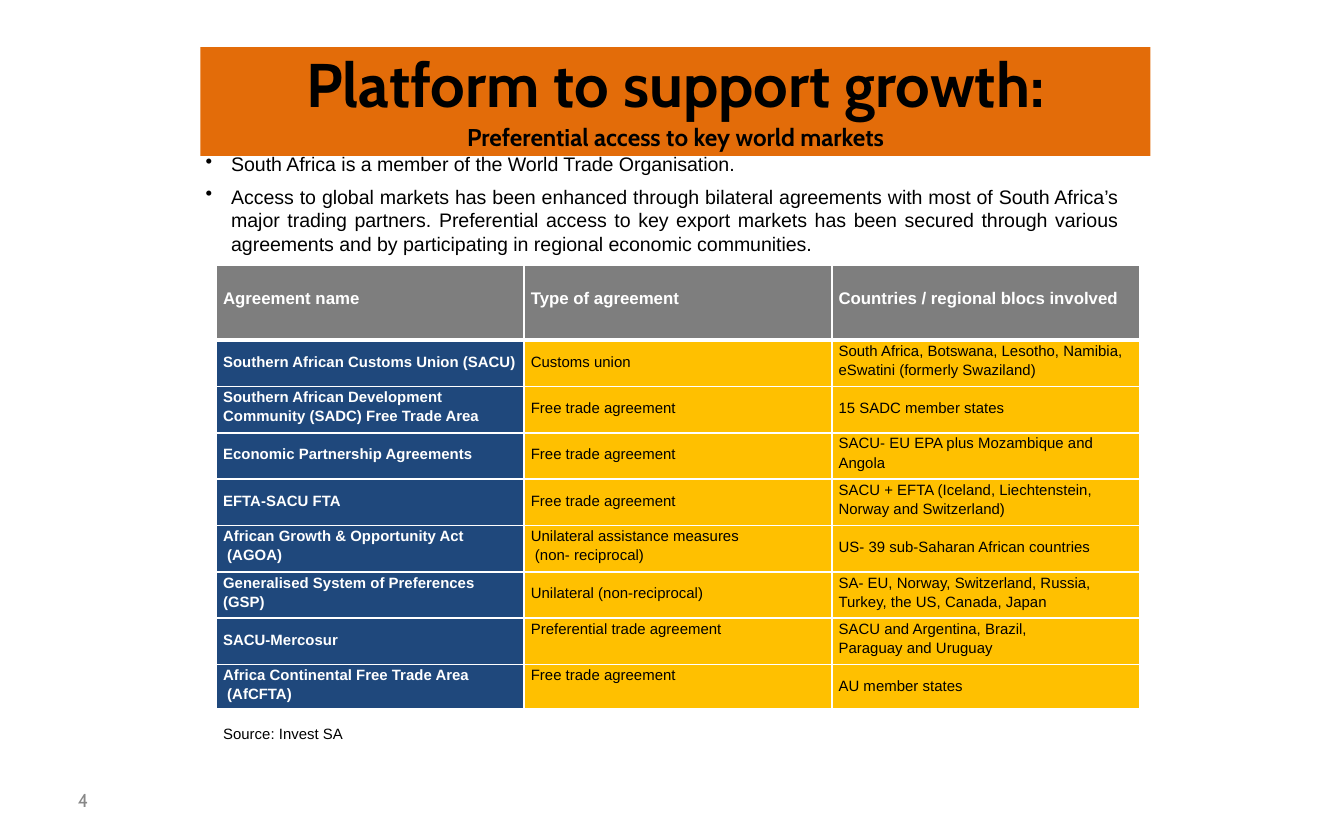
from lxml.etree import SubElement
from pptx import Presentation
from pptx.dml.color import RGBColor
from pptx.enum.text import MSO_ANCHOR, MSO_AUTO_SIZE, PP_ALIGN
from pptx.oxml.ns import qn
from pptx.util import Inches, Pt

ORANGE, GREY, NAVY, AMBER = "E36C09", "7E7E7E", "1F487C", "FFC000"
WHITE, BLACK, NUMBER_GREY = "FFFFFF", "000000", "888888"

HEADING = "Platform to support growth:"
SUBHEADING = "Preferential access to key world markets"
POINTS = [
    "South Africa is a member of the World Trade Organisation.",
    "Access to global markets has been enhanced through bilateral agreements "
    "with most of South Africa’s major trading partners. Preferential access to "
    "key export markets has been secured through various agreements and by "
    "participating in regional economic communities.",
]
HEADERS = ["Agreement name", "Type of agreement",
           "Countries / regional blocs involved"]
TOP, LOW, MIDDLE = 0, 0.02, 0.1
AGREEMENTS = [
    [("Southern African Customs Union (SACU)", MIDDLE),
     ("Customs union", MIDDLE),
     ("South Africa, Botswana, Lesotho, Namibia,\veSwatini (formerly Swaziland)", TOP)],
    [("Southern African Development\vCommunity (SADC) Free Trade Area", TOP),
     ("Free trade agreement", MIDDLE),
     ("15 SADC member states", MIDDLE)],
    [("Economic Partnership Agreements", MIDDLE),
     ("Free trade agreement", MIDDLE),
     ("SACU- EU EPA plus Mozambique and\vAngola", TOP)],
    [("EFTA-SACU FTA", MIDDLE),
     ("Free trade agreement", MIDDLE),
     ("SACU + EFTA (Iceland, Liechtenstein,\vNorway and Switzerland)", TOP)],
    [("African Growth & Opportunity Act\v (AGOA)", TOP),
     ("Unilateral assistance measures\v (non- reciprocal)", TOP),
     ("US- 39 sub-Saharan African countries", MIDDLE)],
    [("Generalised System of Preferences\n(GSP)", LOW),
     ("Unilateral (non-reciprocal)", MIDDLE),
     ("SA- EU, Norway, Switzerland, Russia,\nTurkey, the US, Canada, Japan", LOW)],
    [("SACU-Mercosur", MIDDLE),
     ("Preferential trade agreement", LOW),
     ("SACU and Argentina, Brazil,\nParaguay and Uruguay", LOW)],
    [("Africa Continental Free Trade Area\v (AfCFTA)", TOP),
     ("Free trade agreement", LOW),
     ("AU member states", MIDDLE)],
]
SOURCE = "Source: Invest SA"
PAGE = "4"

TABLE_LEFT, TABLE_TOP, COLUMN_WIDTH = 1.61, 1.97, 2.29
HEADER_HEIGHT, ROW_HEIGHT = 0.56, 0.345


def color(hex_value):
    return RGBColor.from_string(hex_value)


def style(paragraph, size, hex_value=BLACK, bold=False, name="Arial"):
    font = paragraph.font
    font.size, font.bold, font.name = Pt(size), bold, name
    font.color.rgb = color(hex_value)


def set_margins(frame, left=0, top=0):
    frame.margin_left, frame.margin_top = Inches(left), Inches(top)
    frame.margin_right = frame.margin_bottom = 0


def add_text(slide, box, lines, top=0.01, wrap=True):
    frame = slide.shapes.add_textbox(*map(Inches, box)).text_frame
    frame.word_wrap = wrap
    set_margins(frame, top=top)
    frame.text = "\n".join(lines)
    return frame.paragraphs


def add_bullet(paragraph):
    properties = paragraph._p.get_or_add_pPr()
    properties.set("marL", str(Inches(0.2)))
    properties.set("indent", str(Inches(-0.19)))
    SubElement(properties, qn("a:buChar"), char="•")


def add_borders(cell, top, bottom):
    properties = cell._tc.get_or_add_tcPr()
    for side, width in (("L", 1), ("R", 1), ("T", top), ("B", bottom)):
        line = SubElement(properties, qn(f"a:ln{side}"), w=str(Pt(width)))
        fill = SubElement(line, qn("a:solidFill"))
        SubElement(fill, qn("a:srgbClr"), val=WHITE)


def fill_cell(cell, text, top, background, size, hex_value, bold):
    cell.text = text
    set_margins(cell, left=0.05, top=top)
    cell.vertical_anchor = MSO_ANCHOR.TOP
    cell.fill.solid()
    cell.fill.fore_color.rgb = color(background)
    for index, paragraph in enumerate(cell.text_frame.paragraphs):
        style(paragraph, size, hex_value, bold)
        if top == TOP:
            paragraph.line_spacing = 1.15
        if index:
            paragraph.space_before = Pt(1.4)


def add_title(slide):
    title = slide.shapes.title
    title.left, title.top, title.width, title.height = map(
        Inches, (1.49, 0.35, 7.07, 0.81))
    title.fill.solid()
    title.fill.fore_color.rgb = color(ORANGE)
    frame = title.text_frame
    frame.auto_size = MSO_AUTO_SIZE.NONE
    frame.vertical_anchor = MSO_ANCHOR.TOP
    set_margins(frame)
    frame.text = f"{HEADING}\n{SUBHEADING}"
    heading, subheading = frame.paragraphs
    for paragraph, size in ((heading, 33), (subheading, 13)):
        style(paragraph, size, bold=True, name="Cabin")
        paragraph.alignment = PP_ALIGN.CENTER
    heading.line_spacing = Pt(39)
    subheading.space_before = Pt(1.2)


def add_agreements(slide):
    row_count = len(AGREEMENTS) + 1
    table = slide.shapes.add_table(
        row_count, len(HEADERS), Inches(TABLE_LEFT), Inches(TABLE_TOP),
        Inches(COLUMN_WIDTH * len(HEADERS)),
        Inches(HEADER_HEIGHT + ROW_HEIGHT * len(AGREEMENTS))).table
    for column in table.columns:
        column.width = Inches(COLUMN_WIDTH)
    for index, row in enumerate(table.rows):
        row.height = Inches(ROW_HEIGHT if index else HEADER_HEIGHT)
        for cell in row.cells:
            add_borders(cell, 3 if index == 1 else 1,
                        3 if index in (0, row_count - 1) else 1)
    for column, header in enumerate(HEADERS):
        fill_cell(table.cell(0, column), header, 0.18, GREY, 9, WHITE, True)
    for row, agreement in enumerate(AGREEMENTS, 1):
        for column, (text, top) in enumerate(agreement):
            look = (AMBER, 8, BLACK, False) if column else (NAVY, 8, WHITE, True)
            fill_cell(table.cell(row, column), text, top, *look)


def main():
    deck = Presentation()
    deck.slide_width, deck.slide_height = Inches(10), Inches(6.25)
    slide = deck.slides.add_slide(deck.slide_layouts[5])
    add_title(slide)
    add_agreements(slide)

    source, = add_text(slide, (1.66, 5.38, 0.91, 0.16), [SOURCE], wrap=False)
    style(source, 8)

    for point in add_text(slide, (1.52, 1.05, 6.81, 0.87), POINTS, top=0.08):
        style(point, 10.5)
        point.alignment = PP_ALIGN.JUSTIFY
        point.space_before = Pt(5)
        add_bullet(point)

    page, = add_text(slide, (0.58, 5.86, 0.1, 0.19), [PAGE], wrap=False)
    style(page, 10, NUMBER_GREY, name="Cabin")
    deck.save("out.pptx")


if __name__ == "__main__":
    main()
